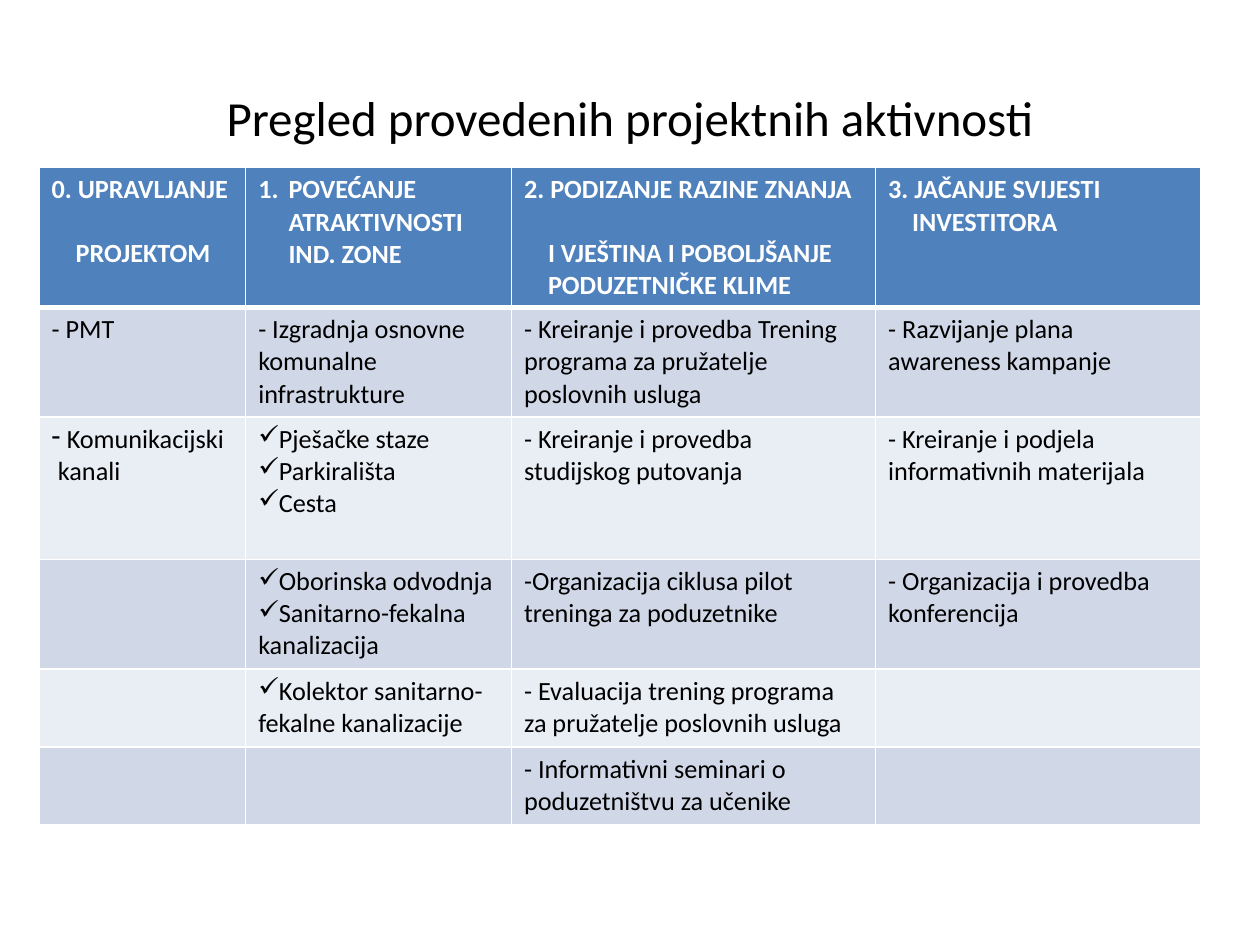
from lxml import etree
from pptx import Presentation
from pptx import util as u
from pptx.dml.color import RGBColor
from pptx.enum import text
from pptx.oxml.ns import qn

COLORS = {"header": "4F81BD", "odd": "D0D8E8", "even": "E9EDF4",
          "white": "FFFFFF", "black": "000000"}


def write(tf, items, size=15, color="black", bold=False, align=text.PP_ALIGN.LEFT):
    """Fill a text frame; an item is a string or (string, paragraph options)."""
    tf.word_wrap = True
    for i, item in enumerate(items):
        line, opts = (item, {}) if isinstance(item, str) else item
        p = tf.paragraphs[0] if i == 0 else tf.add_paragraph()
        p.alignment = align
        if "before" in opts:
            p.space_before = u.Pt(opts["before"])
        pPr = p._p.get_or_add_pPr()
        pPr.set("marL", str(u.Inches(opts.get("left", 0))))
        pPr.set("indent", str(u.Inches(opts.get("first", 0))))
        if "bullet" in opts:
            etree.SubElement(pPr, qn("a:buChar")).set("char", opts["bullet"])
        r = p.add_run()
        r.text = line
        r.font.name = "Calibri"
        r.font.size = u.Pt(size)
        r.font.bold = bold
        r.font.color.rgb = RGBColor.from_string(COLORS[color])


def border(cell, widths):
    """Draw white borders; widths maps each side tag to points."""
    tcPr = cell._tc.get_or_add_tcPr()
    for i, (side, width) in enumerate(widths.items()):
        ln = etree.Element(qn("a:" + side), w=str(u.Pt(width)))
        fill = etree.SubElement(ln, qn("a:solidFill"))
        etree.SubElement(fill, qn("a:srgbClr")).set("val", COLORS["white"])
        tcPr.insert(i, ln)


prs = Presentation()
prs.slide_width, prs.slide_height = u.Inches(10), u.Inches(7.5)
s = prs.slides.add_slide(prs.slide_layouts[6])

# Title
sp = s.shapes.add_textbox(u.Inches(0.5), u.Inches(0.3), u.Inches(9), u.Inches(1.25))
sp.text_frame.vertical_anchor = text.MSO_ANCHOR.MIDDLE
write(sp.text_frame, ["Pregled provedenih projektnih aktivnosti"], size=28,
      align=text.PP_ALIGN.CENTER)

# Activities by project component
check = {"bullet": "✓"}
inset = {"left": 0.19}
inset_wide = {"left": 0.24}
rows = [
    [["0. UPRAVLJANJE", ("PROJEKTOM", {**inset, "before": 18})],
     [("1.\tPOVEĆANJE", {"left": 0.24, "first": -0.24}),
      ("ATRAKTIVNOSTI", inset_wide), ("IND. ZONE", inset_wide)],
     ["2. PODIZANJE RAZINE ZNANJA",
      ("I VJEŠTINA I POBOLJŠANJE", {**inset, "before": 18}),
      ("PODUZETNIČKE KLIME", inset)],
     ["3. JAČANJE SVIJESTI", ("INVESTITORA", inset)]],
    [["- PMT"],
     ["- Izgradnja osnovne komunalne infrastrukture"],
     ["- Kreiranje i provedba Trening programa za pružatelje poslovnih usluga"],
     ["- Razvijanje plana awareness kampanje"]],
    [[("Komunikacijski", {"bullet": "-", "left": 0.12, "first": -0.12}),
      ("kanali", {"left": 0.05})],
     [("Pješačke staze", check), ("Parkirališta", check), ("Cesta", check)],
     ["- Kreiranje i provedba studijskog putovanja"],
     ["- Kreiranje i podjela informativnih materijala"]],
    [[],
     [("Oborinska odvodnja", check), ("Sanitarno-fekalna kanalizacija", check)],
     ["-Organizacija ciklusa pilot treninga za poduzetnike"],
     ["- Organizacija i provedba konferencija"]],
    [[],
     [("Kolektor sanitarno-fekalne kanalizacije", check)],
     ["- Evaluacija trening programa za pružatelje poslovnih usluga"],
     []],
    [[], [], ["- Informativni seminari o poduzetništvu za učenike"], []],
]
col_widths = [1.64, 2.11, 2.89, 2.58]
row_heights = [1.11, 0.87, 1.13, 0.87, 0.62, 0.62]

table = s.shapes.add_table(len(rows), len(col_widths), u.Inches(0.31), u.Inches(1.33),
                           u.Inches(sum(col_widths)), u.Inches(sum(row_heights))).table
for col, width in zip(table.columns, col_widths):
    col.width = u.Inches(width)
for row, height in zip(table.rows, row_heights):
    row.height = u.Inches(height)

for i, row in enumerate(rows):
    is_header = i == 0
    band = "header" if is_header else "odd" if i % 2 else "even"
    for j, items in enumerate(row):
        cell = table.cell(i, j)
        cell.fill.solid()
        cell.fill.fore_color.rgb = RGBColor.from_string(COLORS[band])
        border(cell, {"lnL": 1, "lnR": 1, "lnT": 3 if i == 1 else 1,
                      "lnB": 3 if is_header else 1})
        write(cell.text_frame, items, bold=is_header,
              color="white" if is_header else "black")

prs.save("out.pptx")
